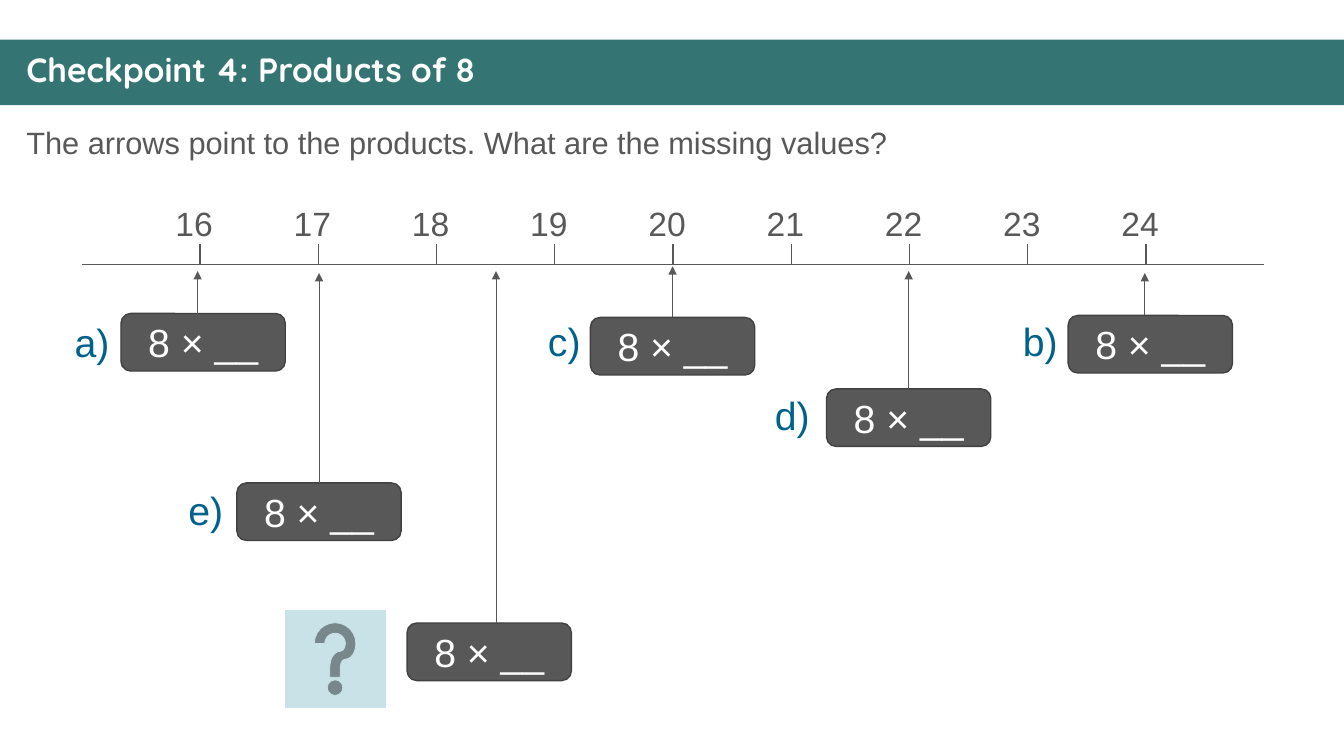
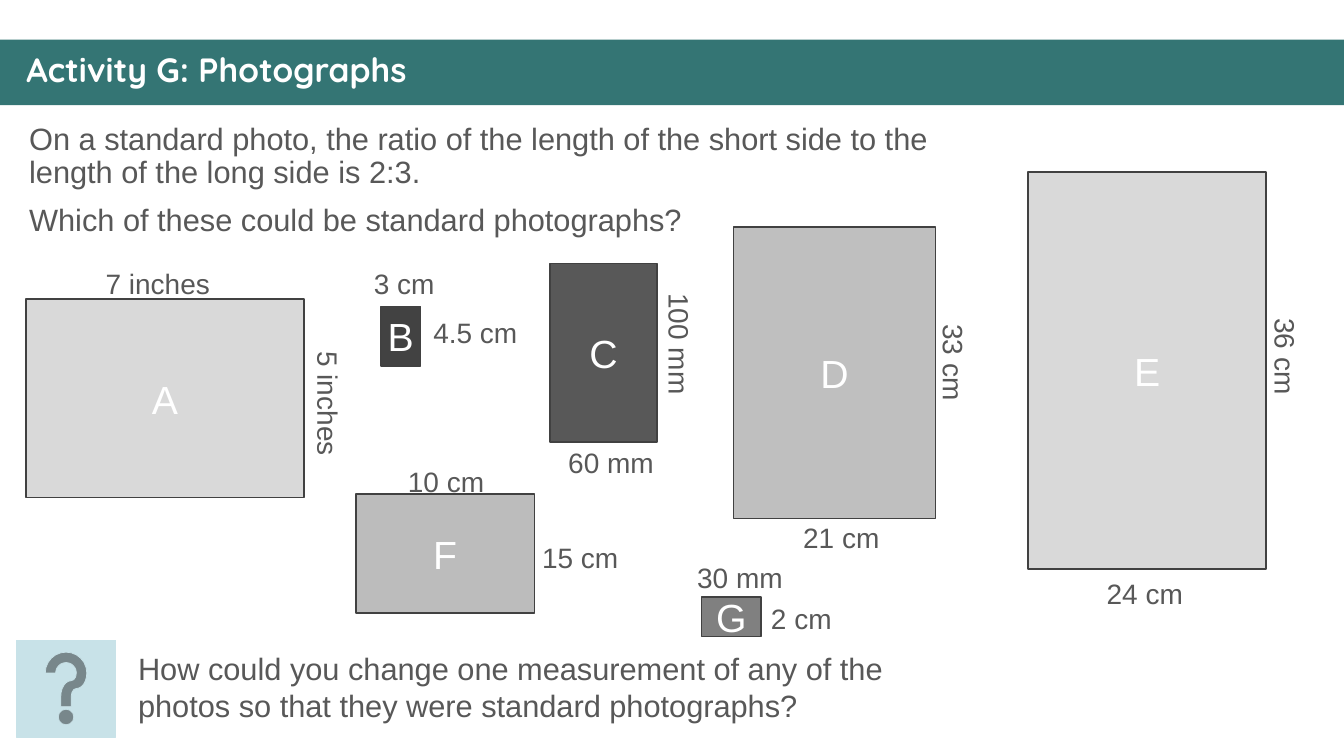
"""Builds two maths lesson slides: products of 8 on a number line, and photograph ratios."""
from dataclasses import dataclass

from lxml.etree import SubElement
from pptx import Presentation
from pptx.dml.color import RGBColor
from pptx.enum.shapes import MSO_CONNECTOR, MSO_SHAPE
from pptx.enum.text import MSO_ANCHOR, MSO_AUTO_SIZE, PP_ALIGN
from pptx.oxml.ns import qn
from pptx.util import Cm, Pt

NO_TABLE_STYLE = "{2D5ABB26-0587-4C30-8999-92F81FD0307C}"


@dataclass(frozen=True)
class Theme:
    """Colours, fonts and type sizes."""
    band: str = "347574"
    text: str = "585858"
    outline: str = "414141"
    label: str = "00628C"
    help: str = "C8E2E8"
    white: str = "FFFFFF"
    title_font: str = "Quicksand"
    body_font: str = "Arial"
    title: int = 24
    body: int = 22
    scale: int = 24
    caption: int = 20
    large: int = 28


class Deck:
    """Holds the theme and the current slide, and draws each kind of element."""

    def __init__(self, theme):
        """Open a wide presentation."""
        self.t = theme
        self.prs = Presentation()
        self.prs.slide_width, self.prs.slide_height = Cm(33.87), Cm(19.05)
        self.s = None

    def slide(self, title, lines, left, spacing):
        """Add a slide with its title and opening text."""
        first = self.s is None
        self.s = self.prs.slides.add_slide(self.prs.slide_layouts[1])
        if first:
            self.master_band()
        head, body = self.s.placeholders
        self.place(head, 0.41, 1.22, 33.12, 1.19)
        self.place(body, left, 3, 25.1, 2.74)
        head.text_frame.text = title
        body.text_frame.text = "\n".join(lines)
        for sp, anchor in ((head, MSO_ANCHOR.MIDDLE), (body, MSO_ANCHOR.TOP)):
            sp.text_frame.auto_size = MSO_AUTO_SIZE.NONE
            sp.text_frame.vertical_anchor = anchor
        self.style(head, self.t.title, self.t.white, self.t.title_font, True)
        self.style(body, self.t.body, self.t.text)
        head.text_frame.paragraphs[0].line_spacing = 0.9
        for p in body.text_frame.paragraphs:
            p.line_spacing = spacing
            p.space_before = Pt(10)
        for pPr in body.element.iter(qn("a:pPr")):
            pPr.set("marL", "0")
            pPr.set("indent", "0")
            SubElement(pPr, qn("a:buNone"))

    def master_band(self):
        """Put the title band on the slide master."""
        band = self.shape(MSO_SHAPE.RECTANGLE, 0, 1, 33.87, 1.65, self.t.band)
        self.prs.slide_master.element.cSld.spTree.insert(2, band.element)

    def place(self, sp, left, top, width, height):
        """Position a shape in centimetres."""
        sp.left, sp.top, sp.width, sp.height = map(Cm, (left, top, width, height))

    def style(self, sp, size, color, font=None, bold=False, align=PP_ALIGN.LEFT):
        """Format all the text of a shape."""
        for p in sp.text_frame.paragraphs:
            p.alignment = align
            for r in p.runs:
                r.font.name = font or self.t.body_font
                r.font.size = Pt(size)
                r.font.bold = bold
                r.font.color.rgb = RGBColor.from_string(color)

    def shape(self, kind, left, top, width, height, fill, line=None, weight=1,
              text="", shapes=None):
        """Draw a filled preset shape with optional centred text."""
        sp = (shapes or self.s.shapes).add_shape(
            kind, Cm(left), Cm(top), Cm(width), Cm(height))
        sp.shadow.inherit = False
        sp.fill.solid()
        sp.fill.fore_color.rgb = RGBColor.from_string(fill)
        if line:
            sp.line.color.rgb = RGBColor.from_string(line)
            sp.line.width = Pt(weight)
        else:
            sp.line.fill.background()
        if text:
            tf = sp.text_frame
            tf.text = text
            tf.margin_left = tf.margin_right = 0
            tf.vertical_anchor = MSO_ANCHOR.MIDDLE
            self.style(sp, self.t.large, self.t.white, align=PP_ALIGN.CENTER)
        return sp

    def text(self, text, left, top, width, height, size, color=None, wrap=False,
             shapes=None):
        """Add a text box."""
        sp = (shapes or self.s.shapes).add_textbox(
            Cm(left), Cm(top), Cm(width), Cm(height))
        tf = sp.text_frame
        tf.text = text
        tf.word_wrap = wrap
        tf.auto_size = MSO_AUTO_SIZE.SHAPE_TO_FIT_TEXT
        self.style(sp, size, color or self.t.text)
        return sp

    def help_icon(self, left, top):
        """Draw the question mark tile."""
        self.shape(MSO_SHAPE.ACTION_BUTTON_HELP, left, top, 2.51, 2.44,
                   self.t.help, self.t.help, 0.5)

    def number_line(self, numbers, left, top, pitch, height):
        """Draw a numbered scale as a one-row table with ticks between cells."""
        count = len(numbers) + 1
        frame = self.s.shapes.add_table(
            1, count, Cm(left), Cm(top), Cm(pitch * count), Cm(height))
        table = frame.table
        table.first_row = table.horz_banding = False
        next(frame.element.iter(qn("a:tableStyleId"))).text = NO_TABLE_STYLE
        for p in frame.element.iter(qn("a:p")):
            SubElement(p, qn("a:endParaRPr"), sz="100")
        for i, tc in enumerate(frame.element.iter(qn("a:tc"))):
            sides = ["lnL"] * (i > 0) + ["lnR"] * (i < count - 1) + ["lnB"]
            for side in sides:
                ln = SubElement(tc.get_or_add_tcPr(), qn("a:" + side), w="12700")
                fill = SubElement(ln, qn("a:solidFill"))
                SubElement(fill, qn("a:srgbClr"), val=self.t.text)
        for cell in table.iter_cells():
            cell.margin_left = cell.margin_right = 0
            cell.margin_top = cell.margin_bottom = 0
            cell.fill.background()
        for i, number in enumerate(numbers):
            self.text(str(number), left + pitch * (i + 1) - 0.87, top - 1.17,
                      1.47, 1.27, self.t.scale)

    def product_card(self, text, left, top, tip, arrow_x=None):
        """Draw a product card and its arrow, joined at the middle by default."""
        width = 4.14
        card = self.shape(MSO_SHAPE.ROUNDED_RECTANGLE, left, top, width, 1.45,
                          self.t.text, self.t.outline, text=text)
        x = Cm(arrow_x or left + width / 2)
        arrow = self.s.shapes.add_connector(MSO_CONNECTOR.STRAIGHT, x, Cm(top), x, Cm(tip))
        if arrow_x is None:
            arrow.begin_connect(card, 0)
            arrow.end_x = arrow.begin_x
        arrow.line.color.rgb = RGBColor.from_string(self.t.text)
        arrow.line.width = Pt(0.5)
        SubElement(arrow.line._get_or_add_ln(), qn("a:tailEnd"), type="triangle")
        SubElement(arrow.element.spPr, qn("a:effectLst"))

    def photo(self, name, fill, box, captions):
        """Draw a photograph grouped with the captions of its sides."""
        shapes = self.s.shapes.add_group_shape().shapes
        self.shape(MSO_SHAPE.RECTANGLE, *box, fill, self.t.outline,
                   text=name, shapes=shapes)
        height = 1.12
        for text, left, top, length, turned in captions:
            shift = (length - height) / 2 if turned else 0
            sp = self.text(text, left - shift, top + shift, length, height,
                           self.t.caption, shapes=shapes)
            sp.rotation = 90 if turned else 0


def products(deck):
    """Build the number line slide."""
    deck.slide("Checkpoint 4: Products of 8",
               ["The arrows point to the products. What are the missing values?"],
               0.41, 1.0)
    deck.number_line(range(16, 25), 2.06, 6.15, 2.98, 0.51)
    cards = [
        (3.05, 7.9, 6.83, 4.98),
        (26.92, 7.95, 6.88, 28.85),
        (14.88, 8, 6.71),
        (20.83, 9.8, 6.83),
        (5.97, 12.17, 6.88),
        (10.26, 15.7, 6.83, 12.5),
    ]
    for card in cards:
        deck.product_card("8 × __", *card)
    labels = [
        ("a)", 1.63, 7.9),
        ("b)", 25.53, 7.87),
        ("c)", 13.56, 7.87),
        ("d)", 19.28, 9.73),
        ("e)", 4.5, 12.12),
    ]
    for text, left, top in labels:
        deck.text(text, left, top, 1.4, 1.45, deck.t.large, deck.t.label)
    deck.help_icon(7.19, 15.39)


def photographs(deck):
    """Build the photograph ratio slide."""
    deck.slide("Activity G: Photographs",
               ["On a standard photo, the ratio of the length of the short side to the "
                "length of the long side is 2:3.",
                "Which of these could be standard photographs?"], 0.48, 0.9)
    deck.help_icon(0.41, 16.13)
    deck.text("How could you change one measurement of any of the photos so that "
              "they were standard photographs?", 3.23, 16.26, 21.79, 2.13,
              deck.t.body, wrap=True)
    photos = [
        ("A", "D9D9D9", (0.66, 7.54, 7, 5),
         [("5 inches", 7.71, 8.6, 3.18, True), ("7 inches", 2.41, 6.6, 3.18, False)]),
        ("F", "BCBCBC", (8.97, 12.45, 4.5, 3),
         [("15 cm", 13.41, 13.49, 2.44, False), ("10 cm", 10.03, 11.58, 2.44, False)]),
        ("B", "424242", (9.6, 7.72, 1, 1.5),
         [("3 cm", 9.17, 6.58, 2.06, False), ("4.5 cm", 10.67, 7.82, 2.64, False)]),
        ("E", "D9D9D9", (25.91, 4.34, 6, 10),
         [("24 cm", 27.64, 14.4, 2.44, False), ("36 cm", 31.83, 7.77, 2.44, True)]),
        ("C", "585858", (13.86, 6.64, 2.7, 4.5),
         [("60 mm", 14.07, 11.1, 2.69, False), ("100 mm", 16.56, 7.14, 3.1, True)]),
        ("D", "BFBFBF", (18.49, 5.72, 5.08, 7.34),
         [("21 cm", 19.99, 13, 2.44, False), ("33 cm", 23.47, 7.92, 2.44, True)]),
        ("G", "808080", (17.68, 15.04, 1.5, 1),
         [("30 mm", 17.32, 14, 2.69, False), ("2 cm", 19.18, 15.04, 2.06, False)]),
    ]
    for photo in photos:
        deck.photo(*photo)


def main():
    """Build and save the presentation."""
    deck = Deck(Theme())
    products(deck)
    photographs(deck)
    deck.prs.save("out.pptx")


if __name__ == "__main__":
    main()
